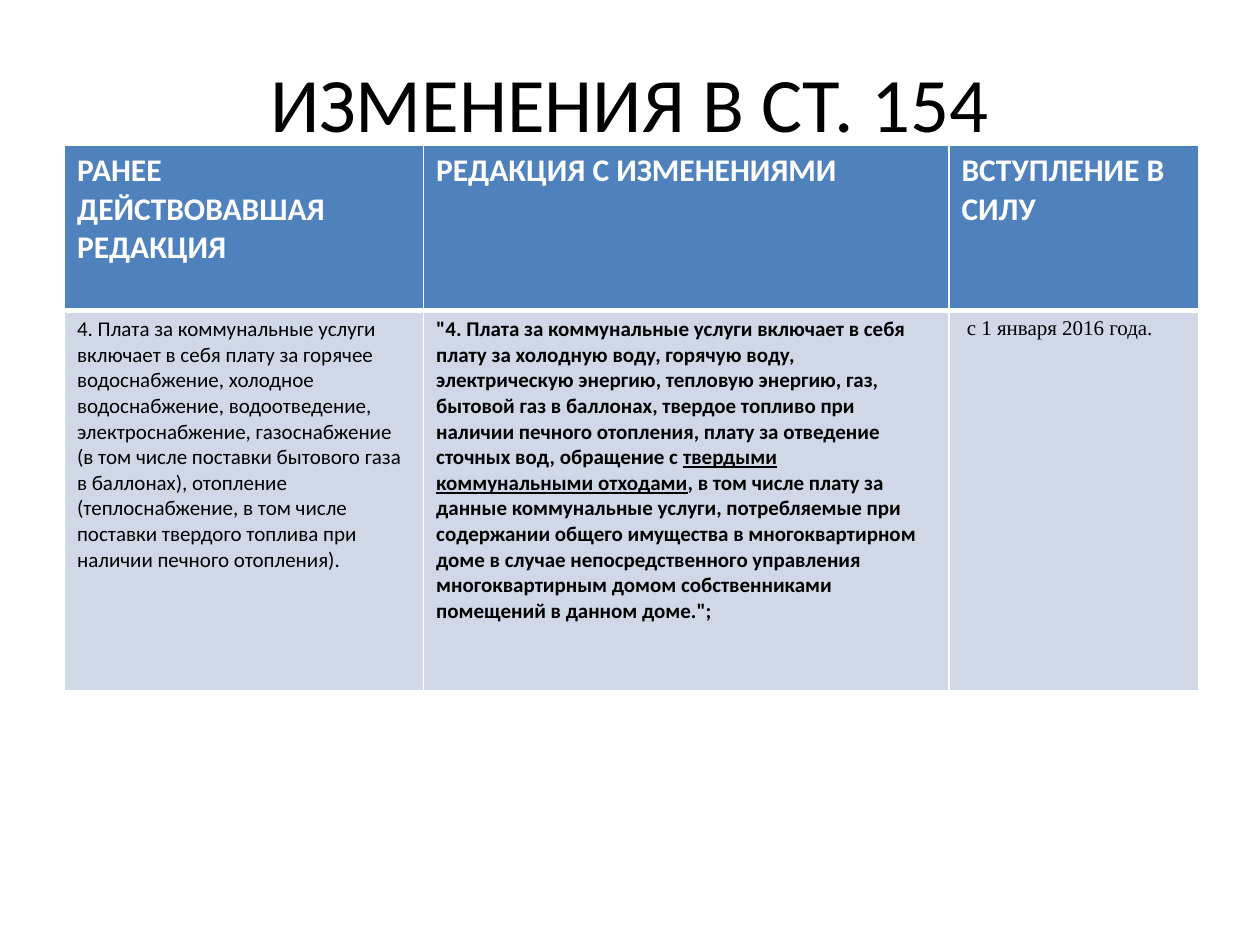
from lxml.etree import SubElement
from pptx import Presentation
from pptx.dml.color import RGBColor
from pptx.enum.text import MSO_ANCHOR, PP_ALIGN
from pptx.oxml.ns import qn
from pptx.util import Cm, Pt

# Content: each cell is a list of (text, underlined) runs
TITLE = "ИЗМЕНЕНИЯ В СТ. 154"
HEADER = [
    [("РАНЕЕ ДЕЙСТВОВАВШАЯ РЕДАКЦИЯ", False)],
    [("РЕДАКЦИЯ С ИЗМЕНЕНИЯМИ", False)],
    [("ВСТУПЛЕНИЕ В СИЛУ", False)],
]
BODY = [
    [("4. Плата за коммунальные услуги включает в себя плату за горячее "
      "водоснабжение, холодное водоснабжение, водоотведение, "
      "электроснабжение, газоснабжение (в том числе поставки бытового газа "
      "в баллонах), отопление (теплоснабжение, в том числе поставки "
      "твердого топлива при наличии печного отопления).", False)],
    [("\"4. Плата за коммунальные услуги включает в себя плату за холодную "
      "воду, горячую воду, электрическую энергию, тепловую энергию, газ, "
      "бытовой газ в баллонах, твердое топливо при наличии печного "
      "отопления, плату за отведение сточных вод, обращение с ", False),
     ("твердыми коммунальными отходами", True),
     (", в том числе плату за данные коммунальные услуги, потребляемые при "
      "содержании общего имущества в многоквартирном доме в случае "
      "непосредственного управления многоквартирным домом собственниками "
      "помещений в данном доме.\";", False)],
    [(" с 1 января 2016 года.", False)],
]
COLORS = {"text": "000000", "white": "FFFFFF", "head": "4F81BD", "body": "D0D8E8"}
SANS, SERIF = "Calibri", "Times New Roman"
COL_WIDTHS = [7.24, 10.59, 5.03]
ROW_HEIGHTS = [3.33, 7.67]

# Per row: fill, text colour, size, (font, bold) per column, border widths
ROWS = [
    (HEADER, "head", "white", 18, [(SANS, True)] * 3,
     {"L": 1, "R": 1, "T": 1, "B": 3}),
    (BODY, "body", "text", 12, [(SANS, False), (SANS, True), (SERIF, False)],
     {"L": 1, "R": 1, "T": 3, "B": 1}),
]


def rgb(name):
    return RGBColor.from_string(COLORS[name])


def add_run(p, text, size, color, font=SANS, bold=False, underline=False):
    r = p.add_run()
    r.text = text
    f = r.font
    f.size, f.name, f.bold, f.underline = Pt(size), font, bold, underline
    f.color.rgb = rgb(color)


def set_borders(cell, widths):
    tc_pr = cell._tc.get_or_add_tcPr()
    for i, (side, width) in enumerate(widths.items()):
        ln = SubElement(tc_pr, qn(f"a:ln{side}"), w=str(Pt(width)))
        fill = SubElement(ln, qn("a:solidFill"))
        SubElement(fill, qn("a:srgbClr"), val=COLORS["white"])
        tc_pr.insert(i, ln)  # borders precede the fill


prs = Presentation()
prs.slide_width, prs.slide_height = Cm(25.4), Cm(19.05)
s = prs.slides.add_slide(prs.slide_layouts[6])

# Title
tf = s.shapes.add_textbox(Cm(1.27), Cm(0.76), Cm(22.86), Cm(2.57)).text_frame
tf.word_wrap = True
tf.vertical_anchor = MSO_ANCHOR.MIDDLE
p = tf.paragraphs[0]
p.alignment = PP_ALIGN.CENTER
add_run(p, TITLE, 44, "text")

# Comparison table
table = s.shapes.add_table(
    len(ROWS), len(COL_WIDTHS), Cm(1.3), Cm(2.93),
    Cm(sum(COL_WIDTHS)), Cm(sum(ROW_HEIGHTS))).table
for col, width in zip(table.columns, COL_WIDTHS):
    col.width = Cm(width)
for row, height in zip(table.rows, ROW_HEIGHTS):
    row.height = Cm(height)

for row, (cells, fill, color, size, styles, borders) in zip(table.rows, ROWS):
    for cell, runs, (font, bold) in zip(row.cells, cells, styles):
        cell.fill.solid()
        cell.fill.fore_color.rgb = rgb(fill)
        set_borders(cell, borders)
        p = cell.text_frame.paragraphs[0]
        for text, underline in runs:
            add_run(p, text, size, color, font, bold, underline)

prs.save("out.pptx")
